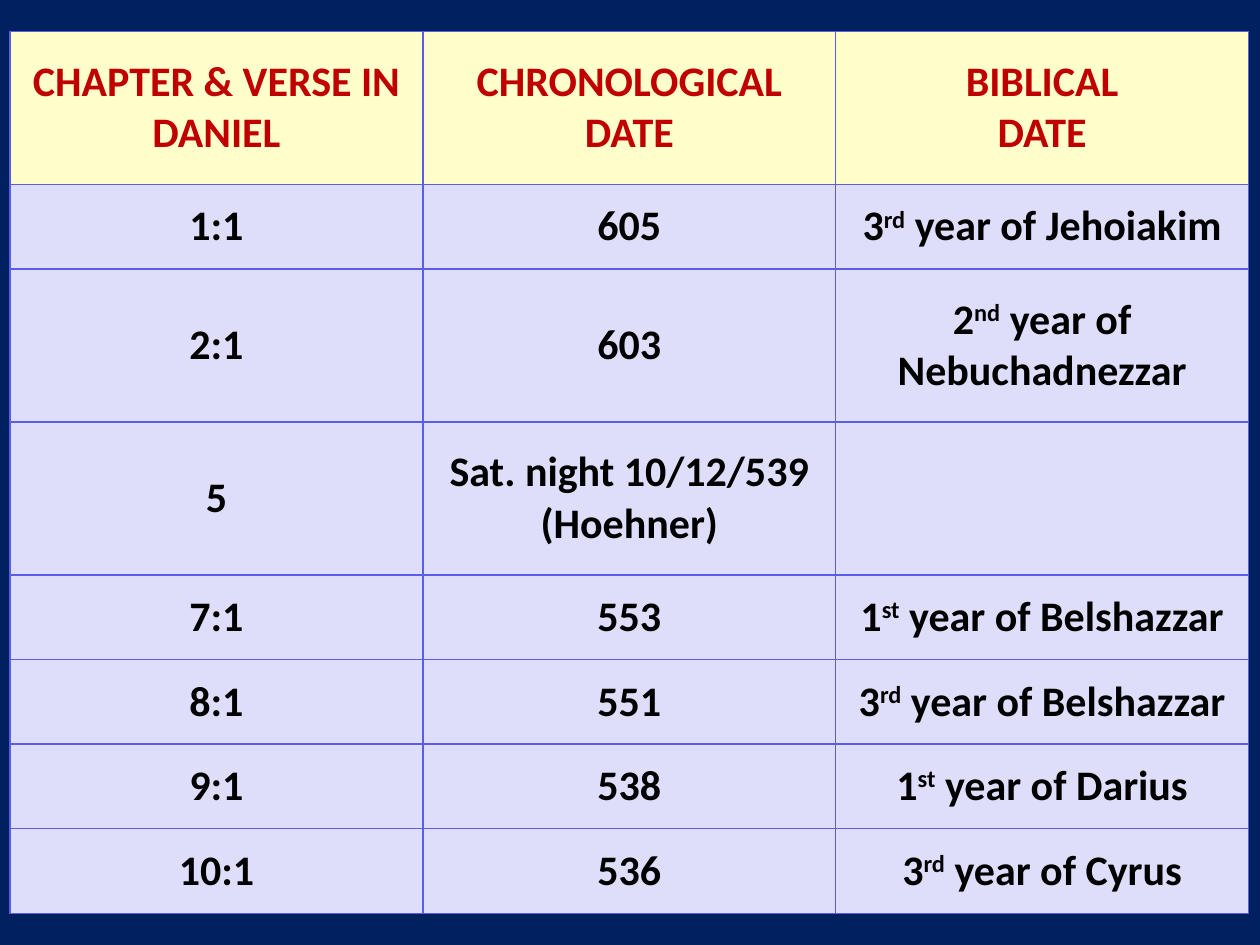
from pptx import Presentation
from pptx.dml.color import RGBColor
from pptx.enum.text import MSO_ANCHOR, PP_ALIGN
from pptx.oxml.ns import qn
from pptx.util import Inches, Pt
from lxml.etree import SubElement

COLORS = {
    "back": "002060",
    "line": "5C5CE7",
    "head": "FFFFCC",
    "body": "DEDEFA",
    "title": "C00000",
    "text": "000000",
}
TALL, SHORT = 1.21, 0.67
HEADS = ["CHAPTER & VERSE IN DANIEL", "CHRONOLOGICAL DATE", "BIBLICAL\nDATE"]
DATES = [
    (SHORT, ["1:1", "605", "3^rd^ year of Jehoiakim"]),
    (TALL, ["2:1", "603", "2^nd^ year of Nebuchadnezzar"]),
    (TALL, ["5", "Sat. night 10/12/539 (Hoehner)", ""]),
    (SHORT, ["7:1", "553", "1^st^ year of Belshazzar"]),
    (SHORT, ["8:1", "551", "3^rd^ year of Belshazzar"]),
    (SHORT, ["9:1", "538", "1^st^ year of Darius"]),
    (SHORT, ["10:1", "536", "3^rd^ year of Cyrus"]),
]


def color(name):
    """Return the named colour."""
    return RGBColor.from_string(COLORS[name])


def add_runs(para, text, ink):
    """Add bold runs, raising the parts between carets."""
    para.alignment = PP_ALIGN.CENTER
    for i, part in enumerate(text.split("^")):
        if not part:
            continue
        run = para.add_run()
        run.text = part
        font = run.font
        font.name, font.size, font.bold = "Calibri", Pt(24), True
        font.color.rgb = color(ink)
        if i % 2:
            run._r.get_or_add_rPr().set("baseline", "30000")


def add_lines(cell):
    """Draw a thin line on each side of a cell."""
    props = cell._tc.get_or_add_tcPr()
    for side in "LRTB":
        line = SubElement(props, qn(f"a:ln{side}"), w=str(Pt(1)))
        fill = SubElement(line, qn("a:solidFill"))
        SubElement(fill, qn("a:srgbClr"), val=COLORS["line"])


def fill_cell(cell, text, shade, ink):
    """Style a cell and write its paragraphs."""
    add_lines(cell)
    cell.fill.solid()
    cell.fill.fore_color.rgb = color(shade)
    cell.vertical_anchor = MSO_ANCHOR.MIDDLE
    frame = cell.text_frame
    for i, line in enumerate(text.split("\n")):
        para = frame.add_paragraph() if i else frame.paragraphs[0]
        add_runs(para, line, ink)


def add_dates(slide, left, top, width, height):
    """Place the table of dates in the given box."""
    rows = [(TALL, HEADS)] + DATES
    frame = slide.shapes.add_table(len(rows), len(HEADS), left, top, width, height)
    table = frame.table
    for col in table.columns:
        col.width = int(width / len(HEADS))
    total = sum(size for size, _ in rows)
    for r, (size, texts) in enumerate(rows):
        table.rows[r].height = int(height * size / total)
        shade, ink = ("body", "text") if r else ("head", "title")
        for c, text in enumerate(texts):
            fill_cell(table.cell(r, c), text, shade, ink)


def main():
    """Build and save the slide."""
    deck = Presentation()
    deck.slide_width, deck.slide_height = Inches(10), Inches(7.5)
    slide = deck.slides.add_slide(deck.slide_layouts[6])
    back = slide.background.fill
    back.solid()
    back.fore_color.rgb = color("back")
    add_dates(slide, Inches(0.08), Inches(0.25), Inches(9.83), Inches(7))
    deck.save("out.pptx")


if __name__ == "__main__":
    main()
